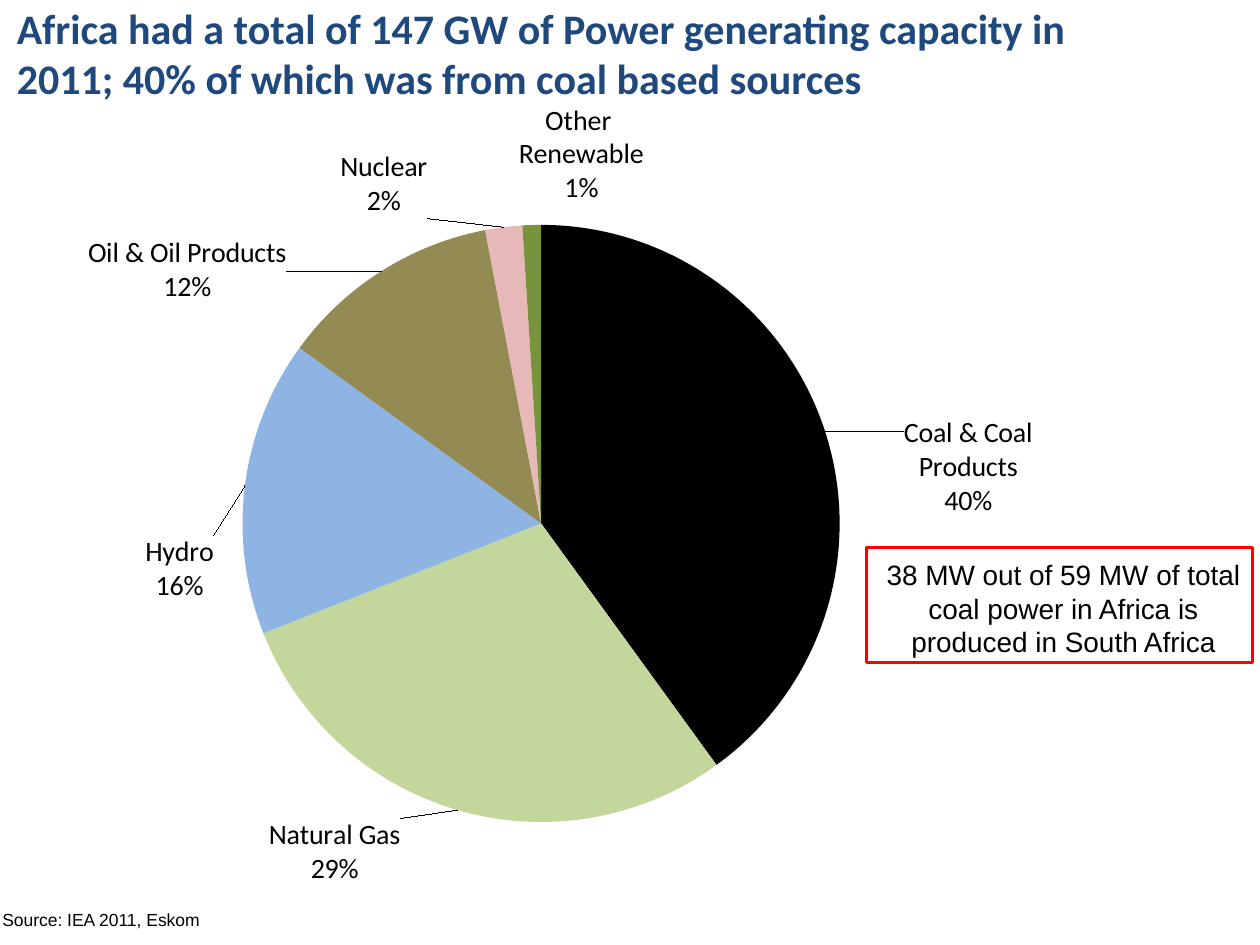
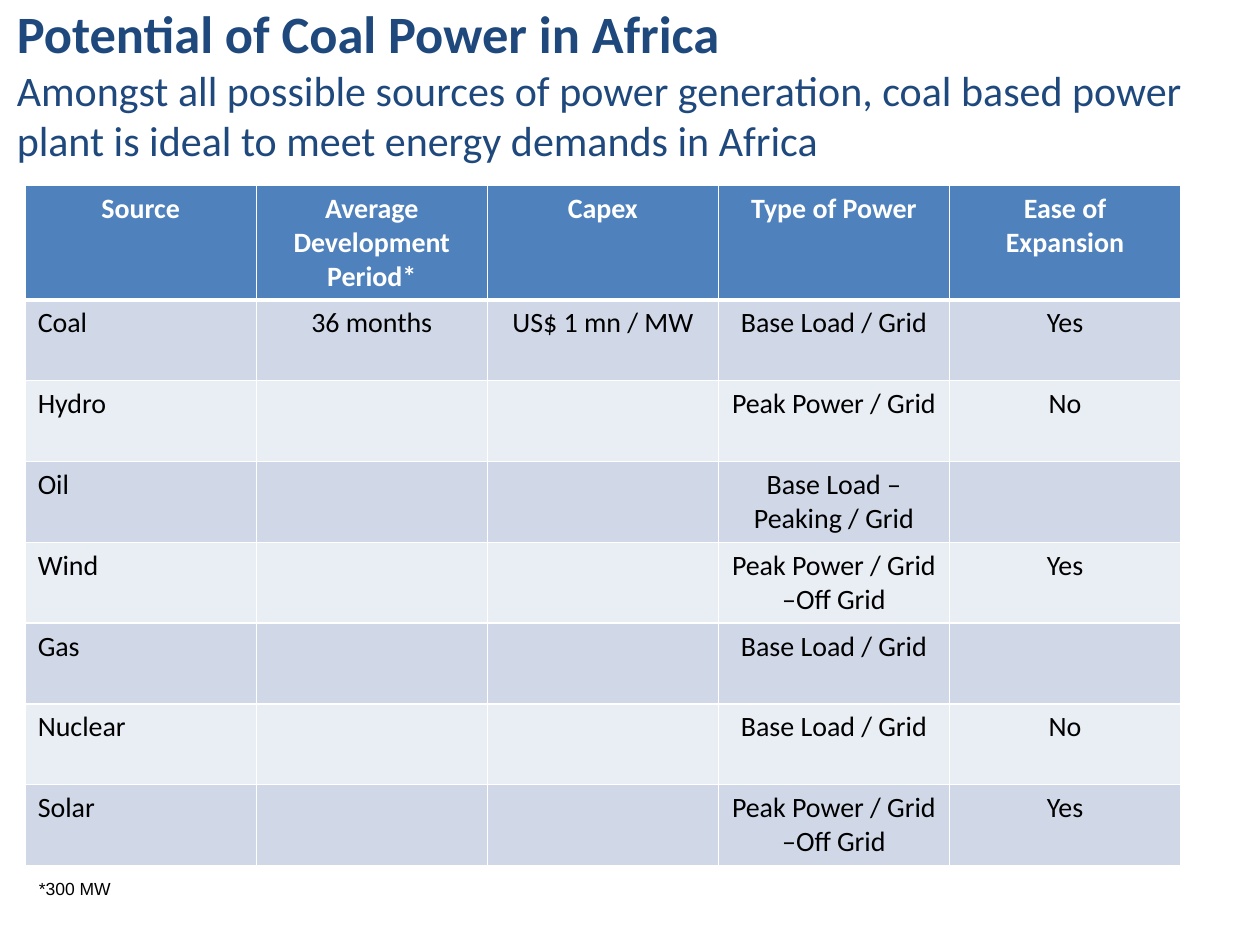
from dataclasses import dataclass
from typing import Optional

from lxml import etree
from pptx import Presentation
from pptx.chart.data import CategoryChartData
from pptx.dml.color import RGBColor
from pptx.enum.chart import XL_CHART_TYPE as ChartType, XL_LABEL_POSITION as LabelPosition
from pptx.enum.shapes import MSO_SHAPE as Shape
from pptx.enum.text import MSO_ANCHOR as Anchor, PP_ALIGN as Align
from pptx.oxml import parse_xml
from pptx.oxml.ns import nsdecls, qn
from pptx.util import Emu, Inches, Pt

SLIDE_W, SLIDE_H = Inches(10), Inches(7.5)
COLUMNS, ROWS = 100, 75

NAVY = RGBColor(0x1F, 0x49, 0x7D)
BLACK = RGBColor(0x00, 0x00, 0x00)
WHITE = RGBColor(0xFF, 0xFF, 0xFF)
RED = RGBColor(0xFF, 0x00, 0x00)
HEADER_BLUE = RGBColor(0x4F, 0x81, 0xBD)
BAND_DARK = RGBColor(0xD0, 0xD8, 0xE8)
BAND_LIGHT = RGBColor(0xE9, 0xED, 0xF4)
GAS_GREEN = RGBColor(0xC3, 0xD6, 0x9B)
HYDRO_BLUE = RGBColor(0x8E, 0xB4, 0xE3)
OIL_BROWN = RGBColor(0x94, 0x8A, 0x54)
NUCLEAR_PINK = RGBColor(0xE6, 0xB9, 0xB8)
RENEWABLE_GREEN = RGBColor(0x77, 0x93, 0x3C)


def x(columns: float) -> Emu:
    return Emu(round(SLIDE_W * columns / COLUMNS))


def y(rows: float) -> Emu:
    return Emu(round(SLIDE_H * rows / ROWS))


@dataclass(frozen=True)
class Frame:
    col: float
    row: float
    cols: float
    rows: float

    def emu(self) -> tuple:
        return x(self.col), y(self.row), x(self.cols), y(self.rows)


@dataclass(frozen=True)
class Style:
    size: float
    name: str = "Calibri"
    color: RGBColor = BLACK
    bold: bool = False
    align: Align = Align.LEFT


@dataclass(frozen=True)
class Slice:
    category: str
    value: float
    color: RGBColor
    label: str = ""
    shift: Optional[tuple] = None


TITLE = Style(24, color=NAVY, bold=True)
BIG_TITLE = Style(30, color=NAVY, bold=True)
SUBTITLE = Style(24, color=NAVY)
FOOTNOTE = Style(10, "Arial")
CALLOUT = Style(16, "Arial", align=Align.CENTER)
LABEL = Style(16, align=Align.CENTER)
HEADER = Style(16, color=WHITE, bold=True, align=Align.CENTER)
ROW_HEAD = Style(16)

SLICES = [
    Slice("Coal & Coal Products", 0.40, BLACK, "Coal & Coal Products\n40%", (5.7, 7.1)),
    Slice("Natural Gas", 0.29, GAS_GREEN, "Natural Gas\n29%", (-4.4, 0.1)),
    Slice("Hydro", 0.16, HYDRO_BLUE, "Hydro\n16%", (-1.9, 9.4)),
    Slice("Oil & Oil Products", 0.12, OIL_BROWN, "Oil & Oil Products\n12%", (-7.2, 3.1)),
    Slice("Nuclear", 0.02, NUCLEAR_PINK, "Nuclear\n2%", (-6, -0.1)),
    Slice("Other Renewables", 0.01, RENEWABLE_GREEN),
]

CHART_FRAME = Frame(1.8, 10.6, 82.5, 61.5)
PIE_FRAME = Frame(19.25, 17.85, 47.4, 47.4)

TABLE_FRAME = Frame(2, 14.7, 91.7, 54)
HEADER_ROWS = 9.1
POWER_SOURCES = [
    ("Source", "Average Development Period*", "Capex", "Type of Power", "Ease of Expansion"),
    ("Coal", "36 months", "US$ 1 mn / MW", "Base Load / Grid", "Yes"),
    ("Hydro", "", "", "Peak Power / Grid", "No"),
    ("Oil", "", "", "Base Load – Peaking / Grid", ""),
    ("Wind", "", "", "Peak Power / Grid –Off Grid", "Yes"),
    ("Gas", "", "", "Base Load / Grid", ""),
    ("Nuclear", "", "", "Base Load / Grid", "No"),
    ("Solar", "", "", "Peak Power / Grid –Off Grid", "Yes"),
]


def write(tf, text: str, style: Style) -> None:
    tf.text = text
    for p in tf.paragraphs:
        p.alignment = style.align
        set_font(p.font, style)


def set_font(font, style: Style) -> None:
    font.size = Pt(style.size)
    font.name = style.name
    font.bold = style.bold
    font.color.rgb = style.color


def add_text(s, frame: Frame, text: str, style: Style,
             wrap: bool = True, inset: bool = True) -> None:
    tf = s.shapes.add_textbox(*frame.emu()).text_frame
    tf.word_wrap = wrap
    tf.vertical_anchor = Anchor.TOP
    if not inset:
        tf.margin_left = tf.margin_right = tf.margin_top = tf.margin_bottom = 0
    write(tf, text, style)


def add_heading(s, row: float, rows: float, text: str, style: Style) -> None:
    add_text(s, Frame(1.33, row, 96.2, rows), text, style, inset=False)


def add_footnote(s, frame: Frame, text: str) -> None:
    add_text(s, frame, text, FOOTNOTE, wrap=False)


def manual_layout(modes: str = "", **shares: float):
    sizes = "".join(f'<c:{key} val="{share:.4f}"/>' for key, share in shares.items())
    return parse_xml(f'<c:layout {nsdecls("c")}><c:manualLayout>{modes}{sizes}'
                     '</c:manualLayout></c:layout>')


def place_plot(chart) -> None:
    plot_area = chart._chartSpace.chart.plotArea
    for layout in plot_area.findall(qn("c:layout")):
        plot_area.remove(layout)
    plot_area.insert(0, manual_layout(
        '<c:layoutTarget val="inner"/><c:xMode val="edge"/><c:yMode val="edge"/>',
        x=(PIE_FRAME.col - CHART_FRAME.col) / CHART_FRAME.cols,
        y=(PIE_FRAME.row - CHART_FRAME.row) / CHART_FRAME.rows,
        w=PIE_FRAME.cols / CHART_FRAME.cols,
        h=PIE_FRAME.rows / CHART_FRAME.rows))


def label_slice(point, part: Slice) -> None:
    label = point.data_label
    element = label._get_or_add_dLbl()
    if part.shift is None:
        for child in list(element)[1:]:
            element.remove(child)
        etree.SubElement(element, qn("c:delete")).set("val", "1")
        return
    write(label.text_frame, part.label, LABEL)
    label.position = LabelPosition.OUTSIDE_END
    cols, rows = part.shift
    element.insert(1, manual_layout(x=cols / CHART_FRAME.cols, y=rows / CHART_FRAME.rows))


def add_pie(s) -> None:
    data = CategoryChartData(number_format="0%")
    data.categories = [part.category for part in SLICES]
    data.add_series("Series 1", [part.value for part in SLICES])
    chart = s.shapes.add_chart(ChartType.PIE, *CHART_FRAME.emu(), data).chart
    chart.has_legend = False
    chart.has_title = False
    set_font(chart.font, Style(18, "Arial"))
    plot = chart.plots[0]
    plot.vary_by_categories = True
    series = plot.series[0]
    labels = series.data_labels
    labels.show_value = True
    labels.show_category_name = True
    labels.number_format = "0%"
    labels.number_format_is_linked = False
    labels.position = LabelPosition.OUTSIDE_END
    set_font(labels.font, LABEL)
    for i, part in enumerate(SLICES):
        point = series.points[i]
        point.format.fill.solid()
        point.format.fill.fore_color.rgb = part.color
        point.format.line.fill.background()
        label_slice(point, part)
    place_plot(chart)


def add_outline(s, frame: Frame) -> None:
    box = s.shapes.add_shape(Shape.RECTANGLE, *frame.emu())
    box.shadow.inherit = False
    box.fill.background()
    box.line.color.rgb = RED
    box.line.width = Pt(1.75)


def set_borders(cell, bottom: float) -> None:
    tc_pr = cell._tc.get_or_add_tcPr()
    for i, (side, width) in enumerate(zip("LRTB", (1, 1, 1, bottom))):
        tc_pr.insert(i, parse_xml(
            f'<a:ln{side} {nsdecls("a")} w="{Pt(width)}"><a:solidFill>'
            f'<a:srgbClr val="{WHITE}"/></a:solidFill></a:ln{side}>'))


def add_source_table(s) -> None:
    n_rows, n_cols = len(POWER_SOURCES), len(POWER_SOURCES[0])
    table = s.shapes.add_table(n_rows, n_cols, *TABLE_FRAME.emu()).table
    table.horz_banding = False
    for column in table.columns:
        column.width = x(TABLE_FRAME.cols / n_cols)
    body_rows = (TABLE_FRAME.rows - HEADER_ROWS) / (n_rows - 1)
    for i, texts in enumerate(POWER_SOURCES):
        table.rows[i].height = y(body_rows if i else HEADER_ROWS)
        band = BAND_DARK if i % 2 else BAND_LIGHT
        for j, text in enumerate(texts):
            cell = table.cell(i, j)
            cell.fill.solid()
            cell.fill.fore_color.rgb = band if i else HEADER_BLUE
            set_borders(cell, 1 if i else 3)
            body = LABEL if j else ROW_HEAD
            write(cell.text_frame, text, body if i else HEADER)


def build_capacity_slide(s) -> None:
    add_heading(s, 0.2, 8.1,
                "Africa had a total of 147 GW of Power generating capacity in \v"
                "2011; 40% of which was from coal based sources", TITLE)
    add_footnote(s, Frame(-0.8, 71.65, 18, 2.7), "Source: IEA 2011, Eskom")
    add_pie(s)
    add_text(s, Frame(68.8, 43.75, 31.2, 9.1),
             "38 MW out of 59 MW of total coal power in Africa is produced in South Africa",
             CALLOUT)
    add_outline(s, Frame(68.8, 43.45, 30.6, 9.1))
    add_text(s, Frame(40.1, 7.63, 12.1, 9.1), "Other \nRenewable\n1%", LABEL, wrap=False)


def build_potential_slide(s) -> None:
    add_heading(s, 0.12, 5, "Potential of Coal Power in Africa", BIG_TITLE)
    add_heading(s, 5.12, 8.1,
                "Amongst all possible sources of power generation, coal based power "
                "plant is ideal to meet energy demands in Africa", SUBTITLE)
    add_source_table(s)
    add_footnote(s, Frame(2.1, 69.2, 7.8, 2.7), "*300 MW")


def main() -> None:
    prs = Presentation()
    prs.slide_width, prs.slide_height = SLIDE_W, SLIDE_H
    for build in (build_capacity_slide, build_potential_slide):
        build(prs.slides.add_slide(prs.slide_layouts[6]))
    prs.save("out.pptx")


if __name__ == "__main__":
    main()
